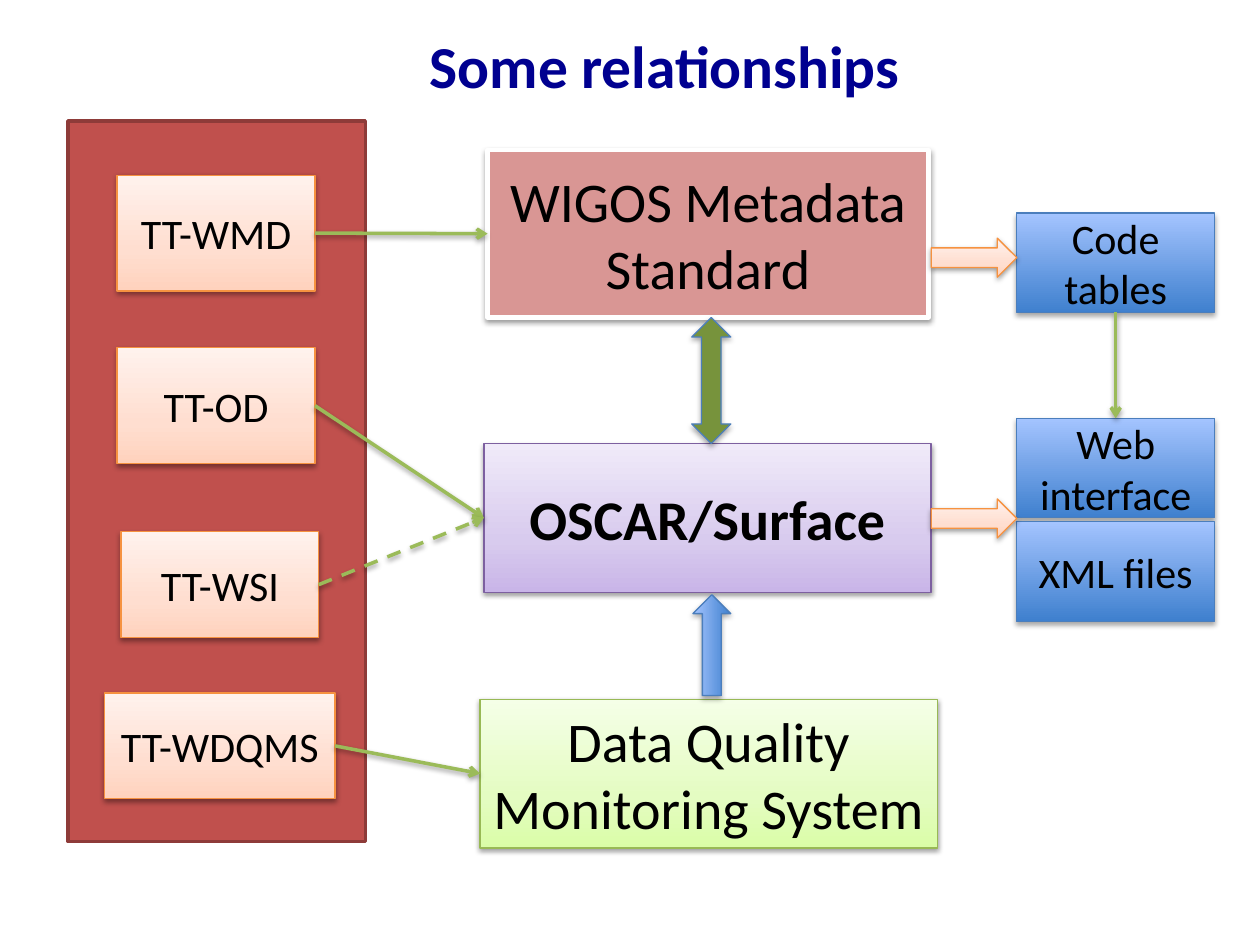
from lxml import etree
from pptx import Presentation, util as u
from pptx.dml.color import RGBColor
from pptx.enum import dml, shapes, text
from pptx.oxml.ns import qn

PEACH = [(0, "FFD2BD"), (35, "FFDED0"), (100, "FFF2ED")]
BLUE = [(0, "3F80CE"), (100, "A4C4FF")]
LILAC = [(0, "C9B5E8"), (35, "D8CBEE"), (100, "F0EAF9")]
LIME = [(0, "DAFDA7"), (35, "E4FCC2"), (100, "F5FFE7")]
ORANGE, NAVY = "F69240", "4B7EBC"
KIND = shapes.MSO_SHAPE


def rgb(code):
    return RGBColor.from_string(code)


class Board:
    font = "Calibri"

    def __init__(self, deck):
        self.slide = deck.slides.add_slide(deck.slide_layouts[5])

    def letter(self, frame, words, size, color="000000", bold=False):
        """Set and format the text of a frame."""
        frame.text = words
        frame.word_wrap = True
        frame.vertical_anchor = text.MSO_ANCHOR.MIDDLE
        for para in frame.paragraphs:
            para.alignment = text.PP_ALIGN.CENTER
            para.space_before = u.Pt(0)
            for run in para.runs:
                run.font.name, run.font.size = self.font, u.Pt(size)
                run.font.bold, run.font.color.rgb = bold, rgb(color)

    def title(self, words, *box):
        head = self.slide.shapes.title
        head.left, head.top, head.width, head.height = map(u.Inches, box)
        self.letter(head.text_frame, words, 34, "000090", True)

    def paint(self, shape, fill):
        """Fill with one colour, or with stops running from bottom to top."""
        if isinstance(fill, str):
            shape.fill.solid()
            shape.fill.fore_color.rgb = rgb(fill)
            return
        shape.fill.gradient()
        shape.fill.gradient_angle = 90
        stops = shape._element.spPr.find(".//" + qn("a:gsLst"))
        for old in list(stops):
            stops.remove(old)
        for pos, code in fill:
            stop = etree.SubElement(stops, qn("a:gs"), pos=str(pos * 1000))
            etree.SubElement(stop, qn("a:srgbClr"), val=code)

    def shade(self, shape, alpha=38, dist=1.6):
        props = shape._element.spPr
        group = props.find(qn("a:effectLst"))
        if group is None:
            group = etree.SubElement(props, qn("a:effectLst"))
        drop = etree.SubElement(
            group, qn("a:outerShdw"), blurRad=str(u.Pt(3.1)),
            dist=str(u.Pt(dist)), dir="5400000", rotWithShape="0")
        color = etree.SubElement(drop, qn("a:srgbClr"), val="000000")
        etree.SubElement(color, qn("a:alpha"), val=str(alpha * 1000))

    def shape(self, box, fill, line, width=0.75, kind=KIND.RECTANGLE,
              shadow=True):
        item = self.slide.shapes.add_shape(kind, *map(u.Inches, box))
        item.shadow.inherit = False
        self.paint(item, fill)
        item.line.color.rgb = rgb(line)
        item.line.width = u.Pt(width)
        if shadow:
            self.shade(item, *((35, 1.8) if line == NAVY else ()))
        return item

    def label(self, words, box, fill, line, size=24, width=0.75, bold=False):
        item = self.shape(box, fill, line, width)
        self.letter(item.text_frame, words, size, bold=bold)
        return item

    def link(self, start, side, end, goal, dash=False):
        wire = self.slide.shapes.add_connector(
            shapes.MSO_CONNECTOR.STRAIGHT, 0, 0, 0, 0)
        wire.begin_connect(start, side)
        wire.end_connect(end, goal)
        wire.line.color.rgb = rgb("9BBB59")
        wire.line.width = u.Pt(2)
        if dash:
            wire.line.dash_style = dml.MSO_LINE.DASH
        stroke = wire._element.spPr.find(qn("a:ln"))
        etree.SubElement(stroke, qn("a:tailEnd"), type="arrow")
        self.shade(wire)


def main():
    deck = Presentation()
    deck.slide_width, deck.slide_height = u.Inches(10), u.Inches(7.5)
    board = Board(deck)
    board.title("Some relationships", 2.16, 0.02, 6.23, 0.99)
    board.shape((0.54, 0.96, 2.36, 5.72), "C0504D", "8E3B39", 2, shadow=False)

    teams = [board.label(name, box, PEACH, ORANGE) for name, box in (
        ("TT-WMD", (0.93, 1.39, 1.57, 0.92)),
        ("TT-OD", (0.93, 2.76, 1.57, 0.92)),
        ("TT-WSI", (0.96, 4.22, 1.57, 0.84)),
        ("TT-WDQMS", (0.83, 5.5, 1.83, 0.84)))]

    norm = board.label("WIGOS Metadata Standard", (3.87, 1.19, 3.5, 1.33),
                       "D99694", "FFFFFF", 32, 2.5)
    oscar = board.label("OSCAR/Surface", (3.84, 3.52, 3.55, 1.18),
                        LILAC, "7D60A0", 32, bold=True)
    watch = board.label("Data Quality Monitoring System",
                        (3.81, 5.55, 3.63, 1.18), LIME, "98B955", 32)

    code, web, _ = [
        board.label(name, (8.07, top, 1.57, 0.79), BLUE, NAVY)
        for name, top in (("Code tables", 1.69), ("Web interface", 3.32),
                          ("XML files", 4.14))]

    for top in (1.89, 3.96):
        board.shape((7.39, top, 0.68, 0.31), PEACH, ORANGE,
                    kind=KIND.RIGHT_ARROW)
    board.shape((5.49, 2.52, 0.31, 1), "77933C", NAVY,
                kind=KIND.UP_DOWN_ARROW)
    rise = board.shape((5.25, 4.97, 0.8, 0.3), BLUE, NAVY,
                       kind=KIND.RIGHT_ARROW)
    rise.rotation = 270

    for team, goal in zip(teams, (norm, oscar, oscar, watch)):
        board.link(team, 3, goal, 1, dash=team is teams[2])
    board.link(code, 2, web, 0)
    deck.save("out.pptx")


if __name__ == "__main__":
    main()
